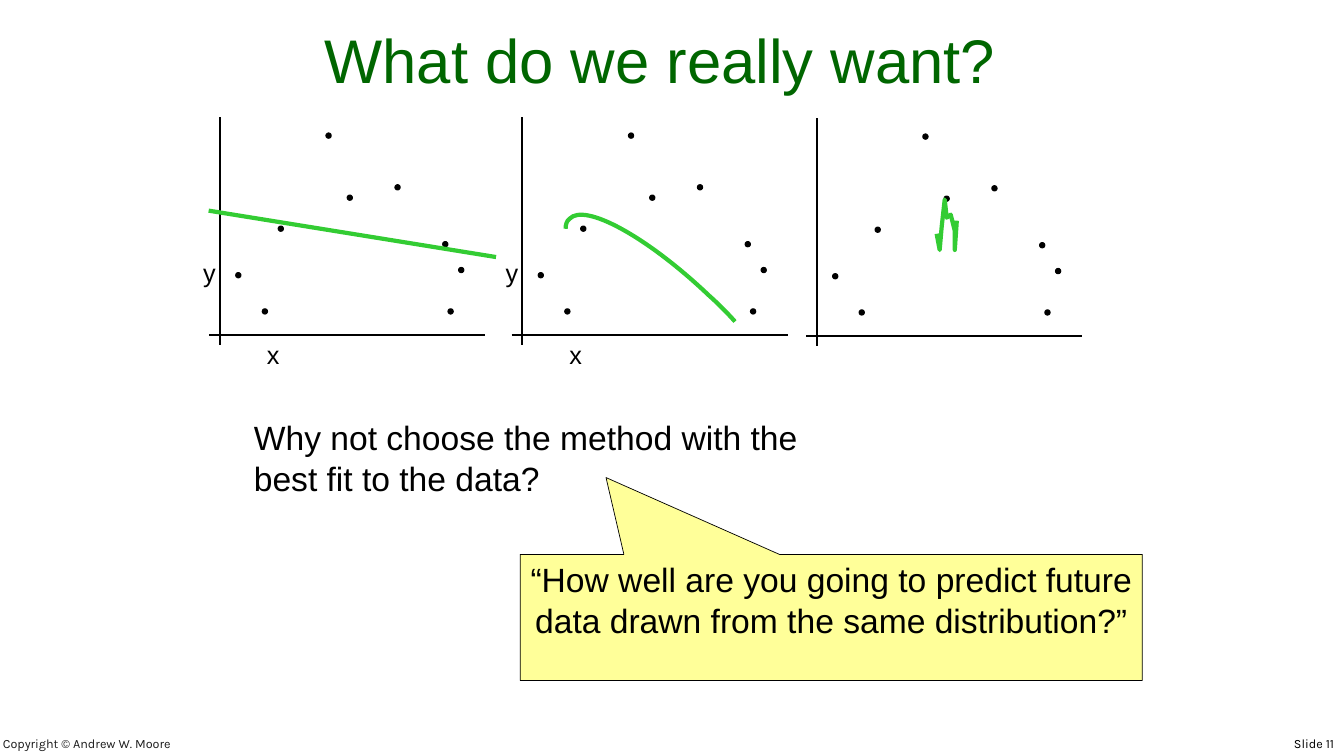
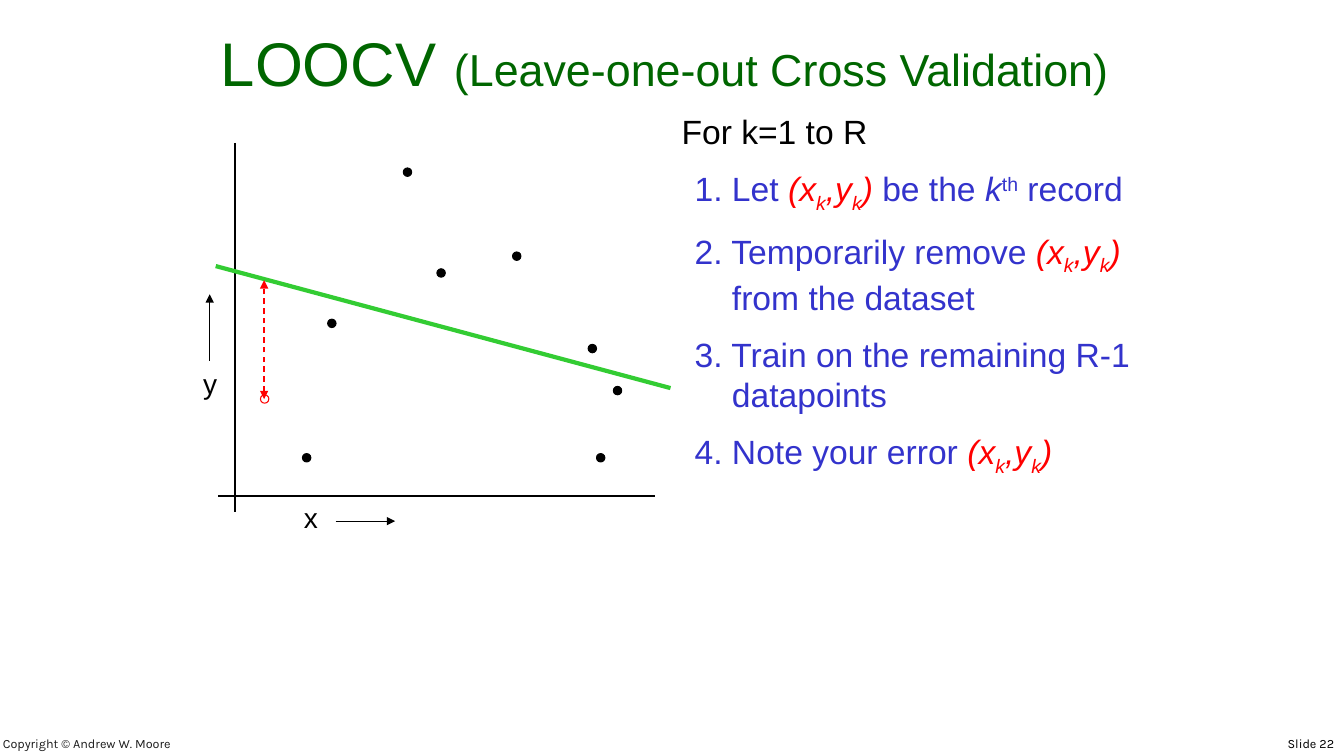
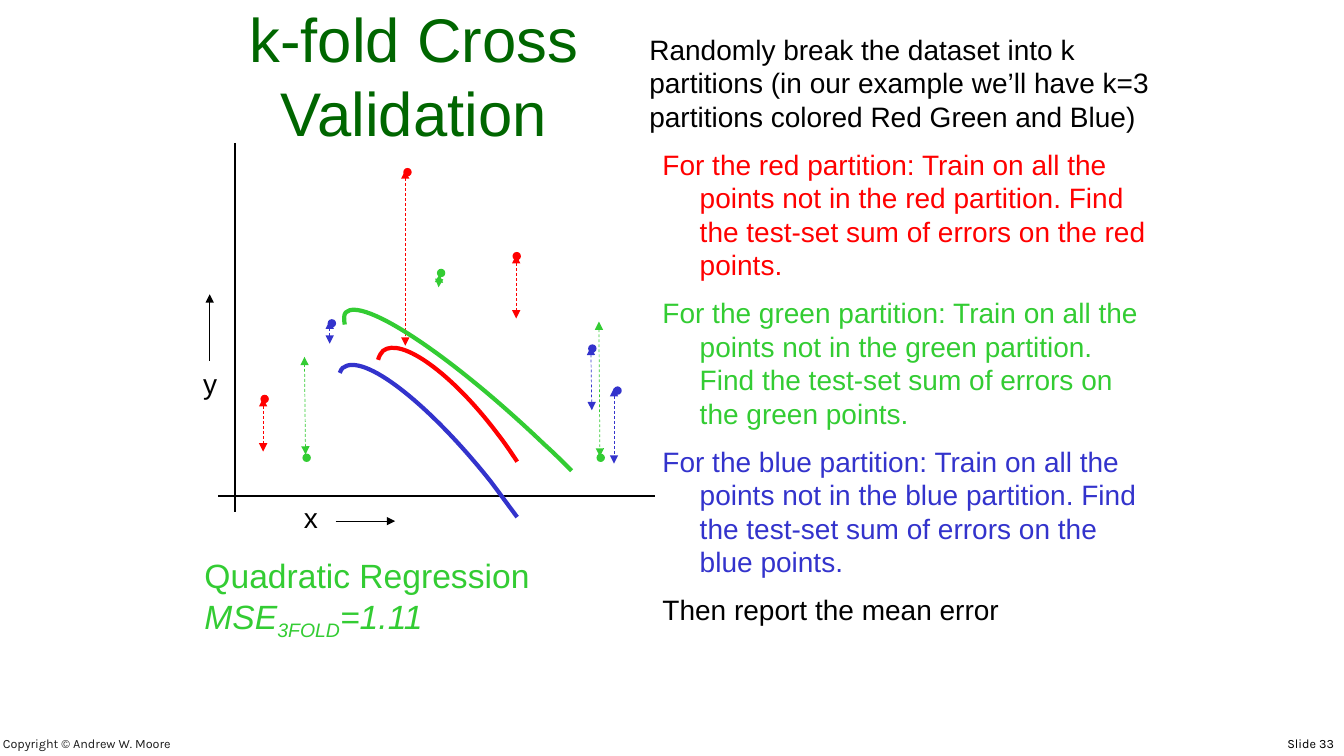
from lxml.etree import SubElement
from pptx import Presentation
from pptx.dml.color import RGBColor
from pptx.enum.dml import MSO_LINE
from pptx.enum.shapes import MSO_CONNECTOR, MSO_SHAPE
from pptx.enum.text import MSO_ANCHOR, MSO_AUTO_SIZE, PP_ALIGN
from pptx.oxml.ns import qn
from pptx.util import Inches, Pt

HUES = {
    "black": "000000", "white": "FFFFFF", "title": "006600", "red": "FF0000",
    "green": "33CC33", "blue": "3333CC", "note": "FFFF99", "foot": "1C1C1C",
}
WIDE, HIGH = 13.33, 7.5
BIG = 1 / 12  # grid step of the large plots
SMALL = 1 / 19  # grid step of the small plots
# Column and row of each data point, counted from the plot's origin
DOTS = [(3, 12), (8, 5), (11, 21), (20, 39), (24, 27),
        (33, 29), (43, 5), (45, 13), (42, 18)]
FOLDS = ["red", "green", "blue", "red", "green", "red", "green", "blue", "blue"]
RECORD = [("(x", "red", 0), ("k", "red", -25), (",y", "red", 0),
          ("k", "red", -25), (")", "red", 0)]


def rgb(hue):
    return RGBColor.from_string(HUES[hue])


def style(font, size, hue, face="Arial"):
    font.size, font.name = Pt(size), face
    font.color.rgb = rgb(hue)


def write(para, parts, size, hue, face="Arial"):
    """Fill a paragraph from strings and (text, hue, baseline) italic parts."""
    style(para.font, size, hue, face)
    for part in [parts] if isinstance(parts, str) else parts:
        run = para.add_run()
        if isinstance(part, str):
            run.text = part
            continue
        run.text, tint, base = part
        run.font.italic = True
        if tint != hue:
            run.font.color.rgb = rgb(tint)
        if base:
            run.font._element.set("baseline", str(base * 1000))


def place(shape, box):
    shape.left, shape.top, shape.width, shape.height = map(Inches, box)
    frame = shape.text_frame
    frame.word_wrap, frame.auto_size = True, MSO_AUTO_SIZE.NONE
    return frame


def text(slide, box, parts, size, hue="black", face="Arial",
         align=PP_ALIGN.LEFT, anchor=MSO_ANCHOR.TOP):
    shape = slide.shapes.add_textbox(0, 0, 0, 0)
    frame = place(shape, box)
    frame.vertical_anchor = anchor
    para = frame.paragraphs[0]
    para.alignment = align
    write(para, parts, size, hue, face)
    return shape


def steps(slide, box, items, size):
    """Fill the body with (parts, hue) items, all but the first hanging."""
    frame = place(slide.placeholders[1], box)
    for i, (parts, hue) in enumerate(items):
        para = frame.add_paragraph() if i else frame.paragraphs[0]
        para.space_before = Pt(size / 2 if i else 0)
        props = para._p.get_or_add_pPr()
        props.set("marL", str(Inches(0.5 if i else 0)))
        props.set("indent", str(Inches(-0.37 if i else 0)))
        SubElement(props, qn("a:buNone"))
        write(para, parts, size, hue)


def brand(deck, slide):
    """Move the copyright line to the master, so that all slides show it."""
    note = text(slide, (-0.07, 7.22, 7.4, 0.28), "Copyright © Andrew W. Moore",
                9, "foot", "Karla", anchor=MSO_ANCHOR.BOTTOM)
    deck.slide_master.shapes._spTree.append(note._element)


def page(deck, layout, number, title, box):
    slide = deck.slides.add_slide(deck.slide_layouts[layout])
    text(slide, (8.11, 7.25, 5.22, 0.25), f"Slide {number}", 9, face="Karla",
         align=PP_ALIGN.RIGHT)
    frame = place(slide.shapes.title, box)
    frame.vertical_anchor = MSO_ANCHOR.BOTTOM
    para = frame.paragraphs[0]
    para.alignment = PP_ALIGN.CENTER
    write(para, title, 44, "title")
    return slide


def line(slide, x1, y1, x2, y2, hue="black", width=1.5, ends=(), dash=False):
    link = slide.shapes.add_connector(
        MSO_CONNECTOR.STRAIGHT, *map(Inches, (x1, y1, x2, y2)))
    link.line.color.rgb, link.line.width = rgb(hue), Pt(width)
    if dash:
        link.line.dash_style = MSO_LINE.DASH
    for end in ends:
        SubElement(link.line._get_or_add_ln(), qn(f"a:{end}")).set("type", "triangle")
    SubElement(link._element.spPr, qn("a:effectLst"))


def gap(slide, x1, y1, x2, y2, hue, width=0.5):
    """Dashed double arrow between a point and the fitted line."""
    line(slide, x1, y1, x2, y2, hue, width, ("headEnd", "tailEnd"), True)


def dot(slide, x, y, size, fill, edge):
    disc = slide.shapes.add_shape(
        MSO_SHAPE.OVAL, *map(Inches, (x, y, size, size)))
    disc.shadow.inherit = False
    disc.fill.solid()
    disc.fill.fore_color.rgb = rgb(fill)
    if edge:
        disc.line.color.rgb, disc.line.width = rgb(edge), Pt(0.75)
    else:
        disc.line.fill.background()


def plot(slide, left, base, step, rise, hues, size=0):
    """Draw axes and points; a size adds the axis letters."""
    def spot(col, row):
        return left + col * step, base - row * rise

    line(slide, *spot(0, 42), *spot(0, -2))
    line(slide, *spot(-2, 0), *spot(50, 0))
    for (col, row), (fill, edge) in zip(DOTS, hues):
        dot(slide, *spot(col, row), step, fill, edge)
    if size:
        for name, col, row in (("x", 7, 0), ("y", -5, 16)):
            text(slide, (*spot(col, row), 4 * step, 0.4), name, size)


def chart(slide, hues):
    """Large plot with an arrow beside each axis letter."""
    plot(slide, 28 * BIG, 59 * BIG, BIG, BIG, hues, 20)
    line(slide, 3.33, 5.17, 3.92, 5.17, width=0.75, ends=("tailEnd",))
    line(slide, 2.08, 3.58, 2.08, 2.92, width=0.75, ends=("tailEnd",))


def trace(slide, points, hue):
    ends = [(Inches(x), Inches(y)) for x, y in points]
    form = slide.shapes.build_freeform(*ends[0])
    form.add_line_segments(ends[1:], close=False)
    shape = form.convert_to_shape()
    shape.shadow.inherit = False
    shape.fill.background()
    shape.line.color.rgb, shape.line.width = rgb(hue), Pt(3)
    return shape


def curve(slide, knots, hue):
    """Trace the knots, then turn each three segments into one Bézier arc."""
    shape = trace(slide, knots, hue)
    legs = list(shape._element.iter(qn("a:lnTo")))
    route = legs[0].getparent()
    for i in range(0, len(legs), 3):
        arc = SubElement(route, qn("a:cubicBezTo"))
        for leg in legs[i:i + 3]:
            arc.append(leg[0])
            route.remove(leg)


def callout(slide, box, words):
    shape = slide.shapes.add_shape(
        MSO_SHAPE.RECTANGULAR_CALLOUT, *map(Inches, box))
    shape.adjustments[0], shape.adjustments[1] = -0.362, -1.11
    shape.shadow.inherit = False
    shape.fill.solid()
    shape.fill.fore_color.rgb = rgb("note")
    shape.line.color.rgb, shape.line.width = rgb("black"), Pt(0.5)
    frame = place(shape, box)
    frame.vertical_anchor = MSO_ANCHOR.TOP
    frame.paragraphs[0].alignment = PP_ALIGN.CENTER
    write(frame.paragraphs[0], words, 24, "black")


def want(deck):
    slide = page(deck, 5, 11, "What do we really want?", (0.33, 0.17, 12.44, 0.83))
    brand(deck, slide)
    black = [("black", "black")] * len(DOTS)
    for left, base, size in ((2.18, 3.32, 18), (5.18, 3.32, 18), (8.1, 3.33, 0)):
        plot(slide, left, base, SMALL, 0.0513, black, size)
    line(slide, 2.07, 2.09, 4.92, 2.55, "green", 3)
    curve(slide, [(7.29, 3.19), (7.21, 3.1), (7.12, 3.01), (7.03, 2.93),
                  (6.42, 2.35), (5.8, 2.01), (5.65, 2.17),
                  (5.62, 2.19), (5.61, 2.23), (5.61, 2.27)], "green")
    trace(slide, [(9.29, 2.32), (9.32, 2.48), (9.34, 2.25), (9.37, 1.98),
                  (9.39, 2.16), (9.43, 2.13), (9.47, 2.29), (9.47, 2.48),
                  (9.49, 2.19)], "green")
    text(slide, (2.42, 4.09, 5.67, 0.91),
         "Why not choose the method with the best fit to the data?", 24)
    callout(slide, (5.16, 5.5, 6.17, 1.25),
            "“How well are you going to predict future data drawn "
            "from the same distribution?”")


def leave(deck):
    slide = page(deck, 1, 22, ["LOOCV ", "(Leave-one-out Cross Validation)"],
                 (1.93, 0.2, 9.33, 0.83))
    slide.shapes.title.text_frame.paragraphs[0].runs[1].font.size = Pt(32)
    steps(slide, (6.66, 1.05, 4.81, 3.74), [
        ("For k=1 to R", "black"),
        (["1. Let ", *RECORD, " be the ", ("k", "blue", 0), "th", " record"], "blue"),
        (["2. Temporarily remove ", *RECORD, " from the dataset"], "blue"),
        ("3. Train on the remaining R-1 datapoints", "blue"),
        (["4. Note your error ", *RECORD], "blue"),
    ], 24)
    power = slide.placeholders[1].text_frame.paragraphs[1].runs[-2]
    power.font._element.set("baseline", "30000")
    chart(slide, [("white", "red")] + [("black", "black")] * (len(DOTS) - 1))
    line(slide, 2.14, 2.64, 6.65, 3.85, "green", 3)
    gap(slide, 2.62, 3.96, 2.62, 2.78, "red", 1)


def fold(deck):
    slide = page(deck, 1, 33, "k-fold Cross Validation", (1.93, 0.2, 4.35, 1.33))
    chart(slide, [(hue, None) for hue in FOLDS])
    parts = [(f"For the {hue} partition: Train on all the points not in the {hue} "
              f"partition. Find the test-set sum of errors on the {hue} points.", hue)
             for hue in ("red", "green", "blue")]
    steps(slide, (6.34, 0.27, 5.16, 6.16), [
        ("Randomly break the dataset into k partitions (in our example we’ll "
         "have k=3 partitions colored Red Green and Blue)", "black"),
        *parts, ("Then report the mean error", "black")], 20)
    gaps = {
        "red": [(2.61, 3.95, 2.61, 4.48), (4.02, 1.69, 4.02, 3.43),
                (5.12, 2.53, 5.12, 3.16)],
        "green": [(3.03, 4.51, 3.02, 3.54), (5.94, 3.19, 5.95, 4.53),
                  (4.36, 2.72, 4.35, 2.85)],
        "blue": [(3.27, 3.41, 3.27, 3.18), (5.86, 3.44, 5.87, 4.07),
                 (6.09, 3.85, 6.09, 4.6)],
    }
    for hue, spans in gaps.items():
        for span in spans:
            gap(slide, *span, hue)
    text(slide, (1.93, 5.46, 4.24, 0.91),
         ["Quadratic Regression ", ("MSE", "green", 0), ("3FOLD", "green", -25),
          ("=1.11", "green", 0)], 24, "green")
    fits = {
        "green": [(5.67, 4.67), (5.58, 4.58), (5.49, 4.49), (5.4, 4.41),
                  (4.47, 3.52), (3.59, 2.94), (3.43, 3.1),
                  (3.41, 3.12), (3.41, 3.17), (3.42, 3.22)],
        "red": [(5.13, 4.58), (5.07, 4.49), (5.01, 4.4), (4.94, 4.31),
                (4.49, 3.71), (3.98, 3.34), (3.8, 3.48),
                (3.78, 3.5), (3.76, 3.53), (3.75, 3.57)],
        "blue": [(5.13, 5.13), (5.04, 5.01), (4.96, 4.9), (4.87, 4.78),
                 (4.25, 4), (3.6, 3.49), (3.4, 3.65),
                 (3.39, 3.66), (3.38, 3.67), (3.37, 3.7)],
    }
    for hue, knots in fits.items():
        curve(slide, knots, hue)


def main():
    deck = Presentation()
    deck.slide_width, deck.slide_height = Inches(WIDE), Inches(HIGH)
    for build in (want, leave, fold):
        build(deck)
    deck.save("out.pptx")


if __name__ == "__main__":
    main()
